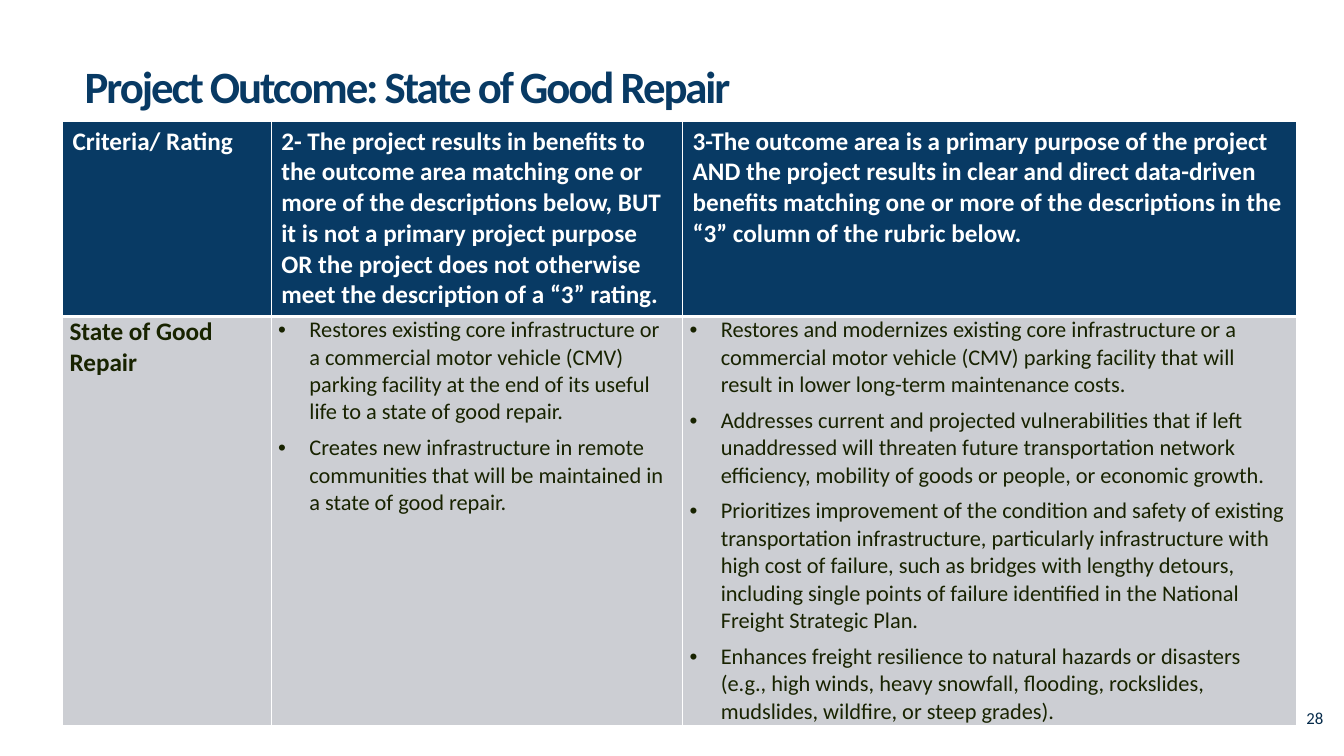
from lxml import etree
from pptx import Presentation
from pptx.dml.color import RGBColor
from pptx.enum.text import MSO_ANCHOR, PP_ALIGN
from pptx.oxml.ns import qn
from pptx.util import Inches, Pt

NAVY = RGBColor(0x08, 0x3A, 0x64)
DEEP_NAVY = RGBColor(0x06, 0x2B, 0x4B)
WHITE = RGBColor(0xFF, 0xFF, 0xFF)
GREY = RGBColor(0xCC, 0xCE, 0xD3)
OLIVE = RGBColor(0x18, 0x23, 0x00)
LEFT, TOP, MIDDLE = PP_ALIGN.LEFT, MSO_ANCHOR.TOP, MSO_ANCHOR.MIDDLE
FONT = "Calibri"
TITLE_ONLY = 5

COLUMN_WIDTHS = [2.07, 4.08, 6.09]
ROW_HEIGHTS = [1.94, 3.99]
HEADINGS = [
    "Criteria/ Rating",
    "2- The project results in benefits to the outcome area matching one or more of the "
    "descriptions below, BUT it is not a primary project purpose OR the project does not "
    "otherwise meet the description of a “3” rating.",
    "3-The outcome area is a primary purpose of the project AND the project results in clear "
    "and direct data-driven benefits matching one or more of the descriptions in the “3” "
    "column of the rubric below.",
]
CRITERION = "State of Good Repair"
RATING_POINTS = [
    [
        "Restores existing core infrastructure or a commercial motor vehicle (CMV) parking "
        "facility at the end of its useful life to a state of good repair.",
        "Creates new infrastructure in remote communities that will be maintained in a state "
        "of good repair.",
    ],
    [
        "Restores and modernizes existing core infrastructure or a commercial motor vehicle "
        "(CMV) parking facility that will result in lower long-term maintenance costs.",
        "Addresses current and projected vulnerabilities that if left unaddressed will threaten "
        "future transportation network efficiency, mobility of goods or people, or economic "
        "growth.",
        "Prioritizes improvement of the condition and safety of existing transportation "
        "infrastructure, particularly infrastructure with high cost of failure, such as bridges "
        "with lengthy detours, including single points of failure identified in the National "
        "Freight Strategic Plan.",
        "Enhances freight resilience to natural hazards or disasters (e.g., high winds, heavy "
        "snowfall, flooding, rockslides, mudslides, wildfire, or steep grades).",
    ],
]


def write_text(frame, lines, size, color, bold=False, bullet=False, spacing=None,
               line_spacing=None):
    """Fill a text frame with one paragraph per line; spacing is between letters, in points."""
    frame.word_wrap = True
    for index, line in enumerate(lines):
        para = frame.paragraphs[0] if index == 0 else frame.add_paragraph()
        para.alignment = LEFT
        if bullet:
            add_bullet(para)
        if line_spacing:
            para.line_spacing = line_spacing
        span = para.add_run()
        span.text = line
        span.font.name = FONT
        span.font.size = Pt(size)
        span.font.bold = bold
        span.font.color.rgb = color
        if spacing:
            span.font._element.set("spc", str(round(spacing * 100)))


def add_bullet(para):
    properties = para._p.get_or_add_pPr()
    indent = Inches(0.31)
    properties.set("marL", str(indent))
    properties.set("indent", str(-indent))
    etree.SubElement(properties, qn("a:buFont")).set("typeface", "Arial")
    etree.SubElement(properties, qn("a:buChar")).set("char", "•")
    para.space_after = Pt(6)


def set_borders(cell, top=1, bottom=1):
    """Draw white cell borders; top and bottom are widths in points."""
    properties = cell._tc.get_or_add_tcPr()
    widths = {"a:lnL": 1, "a:lnR": 1, "a:lnT": top, "a:lnB": bottom}
    for position, (side, width) in enumerate(widths.items()):
        line = etree.Element(qn(side), w=str(Pt(width)))
        fill = etree.SubElement(line, qn("a:solidFill"))
        etree.SubElement(fill, qn("a:srgbClr")).set("val", str(WHITE))
        properties.insert(position, line)


def fill_cell(cell, color):
    cell.fill.solid()
    cell.fill.fore_color.rgb = color
    cell.vertical_anchor = TOP


def place_title(page, left, top, width, height):
    title = page.shapes.title
    title.left, title.top = Inches(left), Inches(top)
    title.width, title.height = Inches(width), Inches(height)
    frame = title.text_frame
    frame.margin_left = frame.margin_right = frame.margin_top = frame.margin_bottom = 0
    frame.vertical_anchor = MIDDLE
    write_text(frame, ["Project Outcome: State of Good Repair"], 32, NAVY, bold=True,
               spacing=-1.5, line_spacing=0.9)


def place_rubric(page, left, top):
    table = page.shapes.add_table(
        len(ROW_HEIGHTS), len(COLUMN_WIDTHS), Inches(left), Inches(top),
        Inches(sum(COLUMN_WIDTHS)), Inches(sum(ROW_HEIGHTS))).table
    table.horz_banding = False
    for column, width in zip(table.columns, COLUMN_WIDTHS):
        column.width = Inches(width)
    for row, height in zip(table.rows, ROW_HEIGHTS):
        row.height = Inches(height)

    for cell, heading in zip(table.rows[0].cells, HEADINGS):
        fill_cell(cell, NAVY)
        set_borders(cell, bottom=3)
        write_text(cell.text_frame, [heading], 18, WHITE, bold=True)

    criterion, *ratings = table.rows[1].cells
    for cell in (criterion, *ratings):
        fill_cell(cell, GREY)
        set_borders(cell, top=3)
        cell.margin_left = cell.margin_right = Inches(0.07)
        cell.margin_top = cell.margin_bottom = 0
    write_text(criterion.text_frame, [CRITERION], 18, OLIVE, bold=True)
    for cell, points in zip(ratings, RATING_POINTS):
        write_text(cell.text_frame, points, 16, OLIVE, bullet=True)


def place_page_number(page, left, top, side):
    box = page.shapes.add_textbox(Inches(left), Inches(top), Inches(side), Inches(side))
    write_text(box.text_frame, ["28"], 12, DEEP_NAVY)


def main():
    deck = Presentation()
    deck.slide_width, deck.slide_height = Inches(13.33), Inches(7.5)
    page = deck.slides.add_slide(deck.slide_layouts[TITLE_ONLY])
    place_title(page, 0.84, 0.72, 9.88, 0.32)
    place_rubric(page, 0.62, 1.2)
    place_page_number(page, 12.86, 6.97, 0.47)
    deck.save("out.pptx")


if __name__ == "__main__":
    main()
